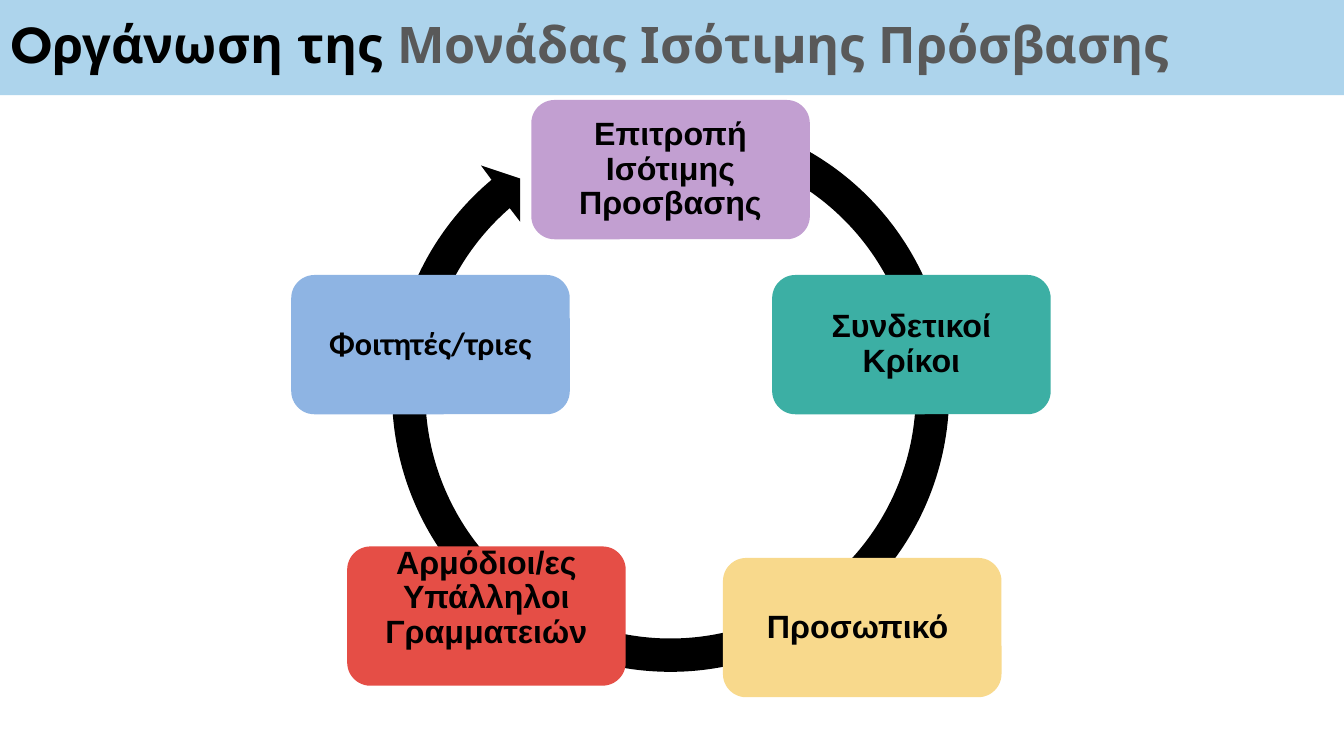
from dataclasses import dataclass
from math import cos, radians, sin, tan

from pptx import Presentation
from pptx.dml.color import RGBColor
from pptx.enum.shapes import MSO_SHAPE
from pptx.enum.text import MSO_ANCHOR, MSO_AUTO_SIZE, PP_ALIGN
from pptx.oxml.ns import qn
from pptx.oxml.xmlchemy import OxmlElement
from pptx.util import Cm, Pt

ROUNDED = MSO_SHAPE.ROUNDED_RECTANGLE
MIDDLE = MSO_ANCHOR.MIDDLE
NO_AUTOFIT = MSO_AUTO_SIZE.NONE
LEFT, CENTER = PP_ALIGN.LEFT, PP_ALIGN.CENTER

SLIDE_WIDTH, SLIDE_HEIGHT = 33.87, 19.05
BLACK = "000000"
BOX_WIDTH, BOX_HEIGHT = 7.02, 3.51
RING_X, RING_Y = 16.9, 9.91
OUTER_RADIUS, INNER_RADIUS = 7.02, 6.18
RING_START, OUTER_END, INNER_END = -70, 230, 229
CURVES = 4
ARROWHEAD = [(12.12, 4.17), (13.11, 4.5), (13.11, 5.59)]


@dataclass
class Member:
    label: str
    left: float
    top: float
    color: str
    font: str = "Arial"
    inset_top: float = 0.42
    inset_bottom: float = 0.42


MEMBERS = [
    Member("Επιτροπή Ισότιμης Προσβασης", 13.39, 2.52, "C29FD1"),
    Member("Συνδετικοί Κρίκοι", 19.46, 6.93, "3CAFA4"),
    Member("Προσωπικό ", 18.22, 14.06, "F8D98C"),
    Member("Αρμόδιοι/ες Υπάλληλοι Γραμματειών", 8.75, 13.77, "E54E46",
           inset_top=0, inset_bottom=0.89),
    Member("Φοιτητές/τριες", 7.34, 6.93, "8EB4E3", font="Calibri"),
]


def paint(target, color: str) -> None:
    """Give a shape or its font a solid colour."""
    target.fill.solid()
    target.fill.fore_color.rgb = RGBColor.from_string(color)


def style_font(font, name: str, size: float, color: str) -> None:
    font.name, font.size, font.bold = name, Pt(size), True
    paint(font, color)


def add_title(slide) -> None:
    title = slide.shapes.title
    title.left, title.top = Cm(0), Cm(0)
    title.width, title.height = Cm(SLIDE_WIDTH), Cm(2.4)
    paint(title, "ADD4EC")
    frame = title.text_frame
    frame.auto_size, frame.vertical_anchor = NO_AUTOFIT, MIDDLE
    heading = frame.paragraphs[0]
    heading.alignment, heading.line_spacing = LEFT, 0.9
    for words, color in [("Oργάνωση της ", BLACK),
                         ("Μονάδας Ισότιμης Πρόσβασης", "595959")]:
        run = heading.add_run()
        run.text = words
        style_font(run.font, "Montserrat", 36, color)


def arc(radius: float, start: float, end: float) -> list[tuple[float, float]]:
    """Start point of an arc, then two handles and an end point per curve."""
    step = radians(end - start) / CURVES
    handle = 4 / 3 * tan(step / 4)

    def ring_point(angle: float, pull: float = 0) -> tuple[float, float]:
        return (RING_X + radius * (cos(angle) - pull * sin(angle)),
                RING_Y + radius * (sin(angle) + pull * cos(angle)))

    angles = [radians(start) + step * i for i in range(CURVES + 1)]
    points = [ring_point(angles[0])]
    for begin, finish in zip(angles, angles[1:]):
        points += [ring_point(begin, handle), ring_point(finish, -handle),
                   ring_point(finish)]
    return points


def bend(shape, first: int) -> None:
    """Turn a run of straight segments, three by three, into curves."""
    segments = list(shape._element.iter(qn("a:lnTo")))[first:first + 3 * CURVES]
    for i in range(0, len(segments), 3):
        curve = OxmlElement("a:cubicBezTo")
        segments[i].addprevious(curve)
        for segment in segments[i:i + 3]:
            curve.append(segment[0])
            segment.getparent().remove(segment)


def add_cycle_arrow(slide) -> None:
    outline = (arc(OUTER_RADIUS, RING_START, OUTER_END) + ARROWHEAD
               + arc(INNER_RADIUS, INNER_END, RING_START))
    points = [(Cm(x), Cm(y)) for x, y in outline]
    builder = slide.shapes.build_freeform(*points[0])
    builder.add_line_segments(points[1:], close=True)
    ring = builder.convert_to_shape()
    bend(ring, 3 * CURVES + len(ARROWHEAD) + 1)
    bend(ring, 0)
    ring.shadow.inherit = False
    paint(ring, BLACK)
    ring.line.fill.background()


def add_member(slide, member: Member) -> None:
    box = slide.shapes.add_shape(ROUNDED, Cm(member.left), Cm(member.top),
                                 Cm(BOX_WIDTH), Cm(BOX_HEIGHT))
    box.shadow.inherit = False
    paint(box, member.color)
    box.line.fill.background()
    frame = box.text_frame
    frame.word_wrap, frame.vertical_anchor = True, MIDDLE
    frame.margin_left = frame.margin_right = Cm(0.42)
    frame.margin_top = Cm(member.inset_top)
    frame.margin_bottom = Cm(member.inset_bottom)
    frame.text = member.label
    label = frame.paragraphs[0]
    label.alignment, label.line_spacing = CENTER, 0.9
    style_font(label.runs[0].font, member.font, 23, BLACK)


def main() -> None:
    deck = Presentation()
    deck.slide_width, deck.slide_height = Cm(SLIDE_WIDTH), Cm(SLIDE_HEIGHT)
    slide = deck.slides.add_slide(deck.slide_layouts[5])
    add_title(slide)
    add_cycle_arrow(slide)
    for member in MEMBERS:
        add_member(slide, member)
    deck.save("out.pptx")


if __name__ == "__main__":
    main()
